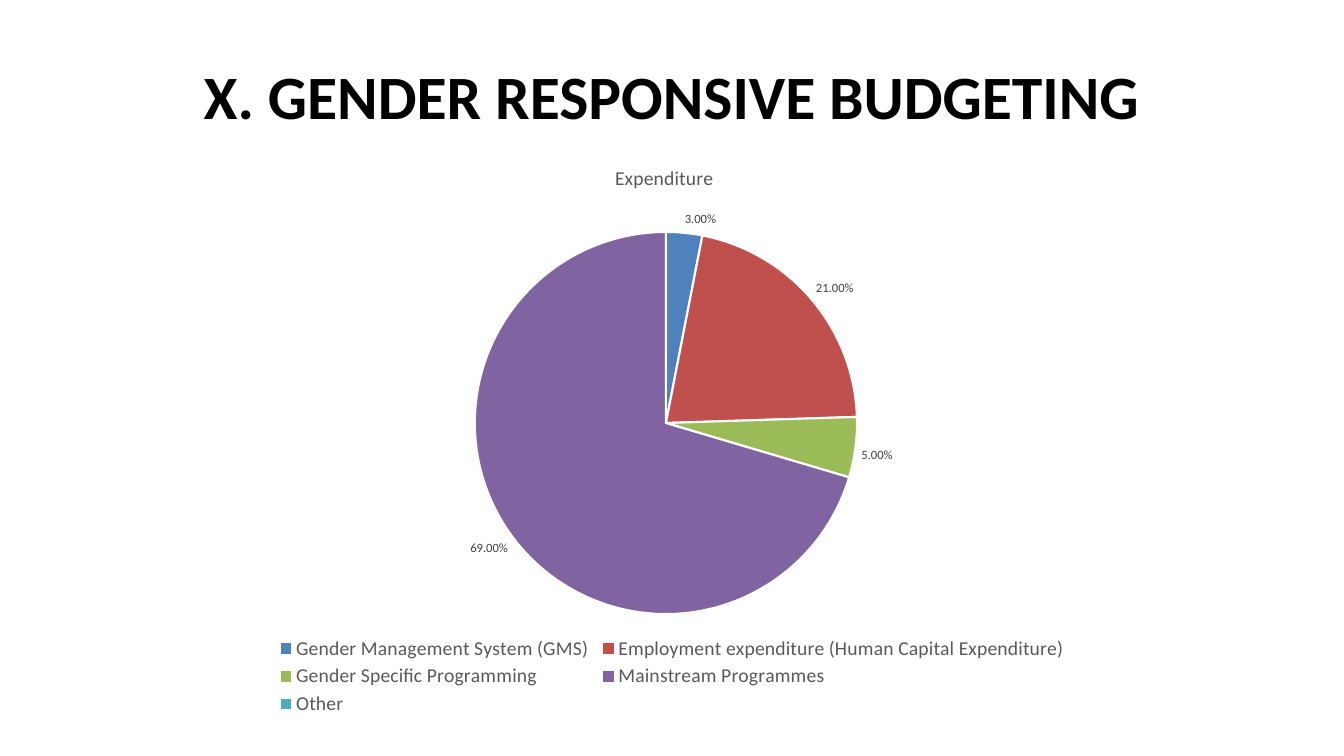
"""Build the gender responsive budgeting slide with its expenditure pie chart."""
from dataclasses import dataclass
from typing import Optional

from lxml import etree
from pptx import Presentation
from pptx import util as u
from pptx.chart.data import CategoryChartData
from pptx.dml.color import RGBColor
from pptx.enum import chart as charts, text
from pptx.oxml import ns

WIDTH, HEIGHT = u.Inches(13.33), u.Inches(7.5)
FONT = "Calibri"
COLORS = {
    "black": "000000", "white": "FFFFFF", "grey": "595959", "label": "404040",
    "blue": "4F81BD", "red": "C0504D", "green": "9BBB59",
    "purple": "8064A2", "teal": "4BACC6",
}


@dataclass(frozen=True)
class Area:
    """Hold a rectangle as shares of its container."""
    left: float
    top: float
    width: Optional[float] = None
    height: Optional[float] = None

    def on_slide(self) -> tuple:
        """Return the rectangle in slide lengths."""
        return (u.Emu(int(self.left * WIDTH)), u.Emu(int(self.top * HEIGHT)),
                u.Emu(int(self.width * WIDTH)), u.Emu(int(self.height * HEIGHT)))


@dataclass(frozen=True)
class Slice:
    """Describe one expenditure slice."""
    name: str
    share: Optional[float]
    color: str


SLICES = [
    Slice("Gender Management System (GMS)", 0.03, "blue"),
    Slice("Employment expenditure (Human Capital Expenditure)", 0.21, "red"),
    Slice("Gender Specific Programming", 0.05, "green"),
    Slice("Mainstream Programmes", 0.69, "purple"),
    Slice("Other", None, "teal"),
]
HEADING_AREA = Area(0.05, 0.04, 0.9, 0.17)
CHART_AREA = Area(0.05, 0.19, 0.9, 0.77)
TITLE_AREA = Area(0.45, 0.03)
PIE_AREA = Area(0.337, 0.15, 0.316, 0.66)
LEGEND_AREA = Area(0.17, 0.84, 0.66, 0.15)


def style_font(font, size: float, color: str, bold: bool = False) -> None:
    """Set typeface, size, colour and weight."""
    font.name, font.size, font.bold = FONT, u.Pt(size), bold
    font.color.rgb = RGBColor.from_string(COLORS[color])


def place(element, area: Area, before: tuple, inner: bool = False) -> None:
    """Give a chart part a manual layout ahead of the named siblings."""
    for old in element.findall(ns.qn("c:layout")):
        element.remove(old)
    layout = etree.Element(ns.qn("c:layout"))
    manual = etree.SubElement(layout, ns.qn("c:manualLayout"))
    settings = [("layoutTarget", "inner")] if inner else []
    settings += [("xMode", "edge"), ("yMode", "edge"), ("x", area.left),
                 ("y", area.top), ("w", area.width), ("h", area.height)]
    for name, value in settings:
        if value is not None:
            etree.SubElement(manual, ns.qn(f"c:{name}")).set("val", str(value))
    names = [ns.qn(f"c:{name}") for name in before]
    position = next((index for index, child in enumerate(element)
                     if child.tag in names), len(element))
    element.insert(position, layout)


def add_heading(slide, wording: str) -> None:
    """Add the centred slide heading."""
    frame = slide.shapes.add_textbox(*HEADING_AREA.on_slide()).text_frame
    frame.word_wrap = True
    frame.vertical_anchor = text.MSO_ANCHOR.MIDDLE
    paragraph = frame.paragraphs[0]
    paragraph.alignment = text.PP_ALIGN.CENTER
    run = paragraph.add_run()
    run.text = wording
    style_font(run.font, 44, "black", bold=True)


def add_pie(slide) -> None:
    """Add the expenditure pie with title, labels and legend."""
    data = CategoryChartData(number_format="0.00%")
    data.categories = [part.name for part in SLICES]
    data.add_series("Series 1", [part.share for part in SLICES])
    chart = slide.shapes.add_chart(
        charts.XL_CHART_TYPE.PIE, *CHART_AREA.on_slide(), data).chart
    style_font(chart.font, 10, "black")

    chart.has_title = True
    run = chart.chart_title.text_frame.paragraphs[0].add_run()
    run.text = "Expenditure"
    style_font(run.font, 14, "grey")

    chart.has_legend = True
    chart.legend.position = charts.XL_LEGEND_POSITION.BOTTOM
    chart.legend.include_in_layout = False
    style_font(chart.legend.font, 14, "grey")

    plot = chart.plots[0]
    plot.vary_by_categories = True
    for index, part in enumerate(SLICES):
        form = plot.series[0].points[index].format
        form.fill.solid()
        form.fill.fore_color.rgb = RGBColor.from_string(COLORS[part.color])
        form.line.color.rgb = RGBColor.from_string(COLORS["white"])
        form.line.width = u.Pt(1.5)

    labels = plot.series[0].data_labels
    labels.show_value = True
    labels.number_format, labels.number_format_is_linked = "0.00%", False
    labels.position = charts.XL_LABEL_POSITION.OUTSIDE_END
    style_font(labels.font, 9, "label")

    plot_area = chart.element.find(".//" + ns.qn("c:plotArea"))
    place(chart.chart_title.element if hasattr(chart.chart_title, "element")
          else chart.element.find(".//" + ns.qn("c:title")),
          TITLE_AREA, ("overlay", "spPr", "txPr"))
    place(plot_area, PIE_AREA, ("pieChart",), inner=True)
    place(chart.element.find(".//" + ns.qn("c:legend")),
          LEGEND_AREA, ("overlay", "spPr", "txPr"))


def main() -> None:
    """Build and save the presentation."""
    presentation = Presentation()
    presentation.slide_width, presentation.slide_height = WIDTH, HEIGHT
    slide = presentation.slides.add_slide(presentation.slide_layouts[6])
    add_heading(slide, "X. GENDER RESPONSIVE BUDGETING")
    add_pie(slide)
    presentation.save("out.pptx")


if __name__ == "__main__":
    main()
